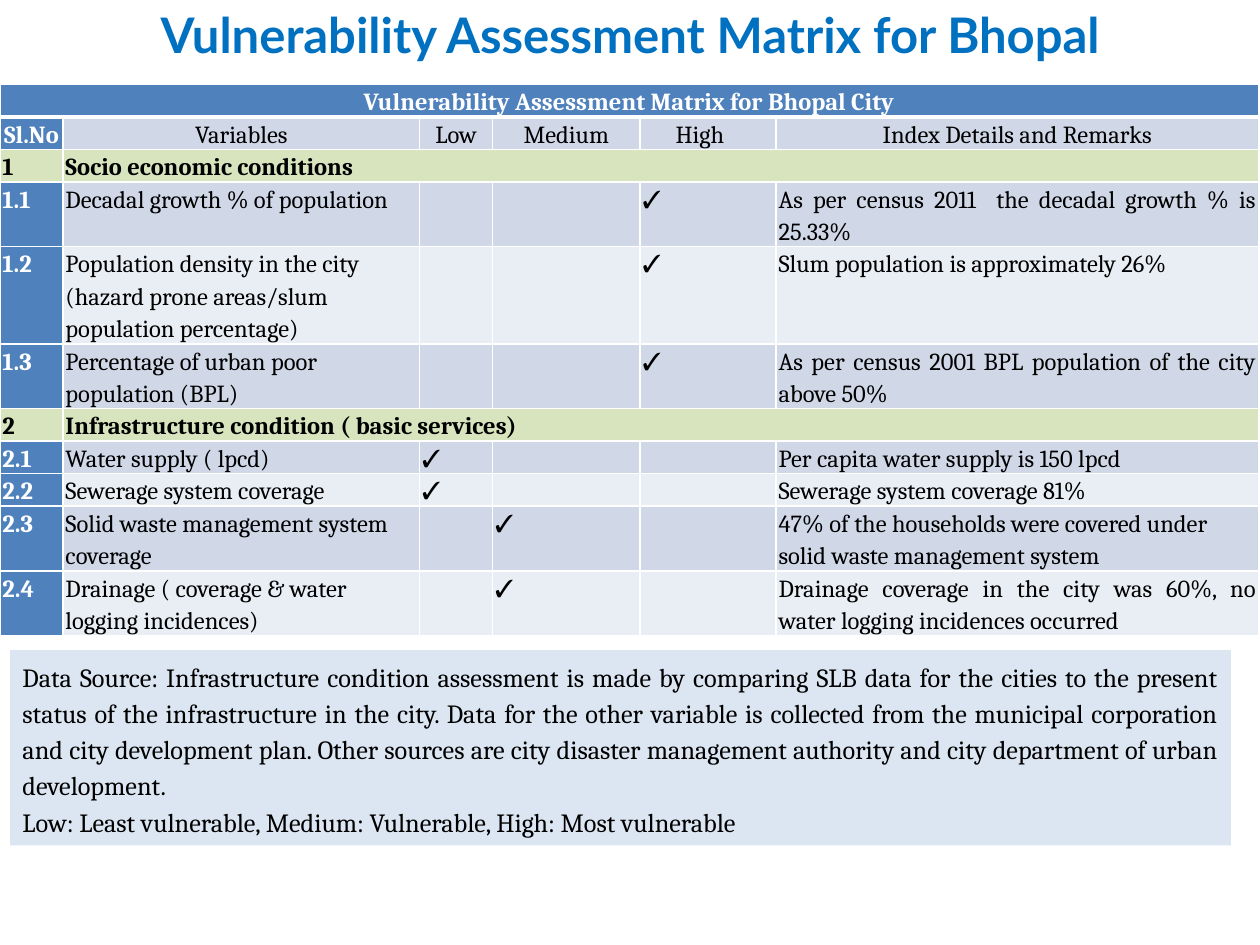
from lxml import etree
from pptx import Presentation
from pptx.dml.color import RGBColor
from pptx.enum.shapes import MSO_SHAPE
from pptx.enum.text import MSO_ANCHOR, MSO_AUTO_SIZE, PP_ALIGN
from pptx.oxml.ns import qn
from pptx.util import Inches, Pt

RECTANGLE = MSO_SHAPE.RECTANGLE
MIDDLE = MSO_ANCHOR.MIDDLE
GROW = MSO_AUTO_SIZE.SHAPE_TO_FIT_TEXT
LEFT, CENTER, JUSTIFY = PP_ALIGN.LEFT, PP_ALIGN.CENTER, PP_ALIGN.JUSTIFY

COLORS = {
    "title": "0070C0", "header": "4F81BD", "section": "D7E4BD",
    "band_dark": "D0D8E8", "band_light": "E9EDF4", "note": "DCE6F2",
    "white": "FFFFFF", "black": "000000",
}
BODY_FONT = "Cambria"
TABLE_SIZE = 14
LINE_SPACING = 1.15
LINE_HEIGHT = 0.25
COLUMN_WIDTHS = [0.5, 2.83, 0.58, 1.17, 1.08, 3.83]
LEVELS = ["Low", "Medium", "High"]
TABLE_TITLE = "Vulnerability Assessment Matrix for Bhopal City"
HEADINGS = ["Sl.No", "Variables", "Low", "Medium", "High   ", "Index Details and Remarks"]

# Section name, then (variable, level, remark, lines of text, remark alignment)
SECTIONS = [
    ("Socio economic conditions", [
        ("Decadal growth % of population", "High",
         "As per census 2011  the decadal growth % is 25.33%", 2, JUSTIFY),
        ("Population density in the city (hazard prone areas/slum population percentage)",
         "High", "Slum population is approximately 26%", 3, JUSTIFY),
        ("Percentage of urban poor population (BPL)", "High",
         "As per census 2001 BPL population of the city above 50%", 2, JUSTIFY),
    ]),
    ("Infrastructure condition ( basic services)", [
        ("Water supply ( lpcd)", "Low", "Per capita water supply is 150 lpcd", 1, JUSTIFY),
        ("Sewerage system coverage", "Low", "Sewerage system coverage 81%", 1, JUSTIFY),
        ("Solid waste management system coverage", "Medium",
         "47% of the households were covered under solid waste management system", 2, LEFT),
        ("Drainage ( coverage & water logging incidences)", "Medium",
         "Drainage coverage in the city was 60%, no water logging incidences occurred",
         2, JUSTIFY),
    ]),
]
NOTES = [
    "Data Source: Infrastructure condition assessment is made by comparing SLB data for "
    "the cities to the present status of the infrastructure in the city. Data for the "
    "other variable is collected from the municipal corporation and city development "
    "plan. Other sources are city disaster management authority and city department of "
    "urban development.",
    "Low: Least vulnerable, Medium: Vulnerable, High: Most vulnerable",
]


def rgb(name):
    return RGBColor.from_string(COLORS[name])


def write(paragraph, text, size, color="black", align=JUSTIFY, bold=False,
          font=BODY_FONT, spacing=LINE_SPACING):
    paragraph.text = text
    paragraph.alignment = align
    paragraph.line_spacing = spacing
    paragraph.font.name = font
    paragraph.font.size = Pt(size)
    paragraph.font.bold = bold
    paragraph.font.color.rgb = rgb(color)


def add_title(slide, text):
    title = slide.shapes.add_textbox(Inches(0.5), Inches(-0.08), Inches(9), Inches(0.7))
    frame = title.text_frame
    frame.word_wrap = True
    frame.vertical_anchor = MIDDLE
    write(frame.paragraphs[0], text, 28, "title", CENTER, True, "Lato", 1.0)


def set_borders(cell, top=1, bottom=1):
    properties = cell._tc.get_or_add_tcPr()
    for side, width in (("L", 1), ("R", 1), ("T", top), ("B", bottom)):
        line = etree.SubElement(properties, qn(f"a:ln{side}"), w=str(Pt(width)))
        fill = etree.SubElement(line, qn("a:solidFill"))
        etree.SubElement(fill, qn("a:srgbClr"), val=COLORS["white"])


def fill_cell(cell, text, fill, **style):
    cell.margin_left = cell.margin_right = Inches(0.02)
    cell.margin_top = cell.margin_bottom = 0
    cell.fill.solid()
    cell.fill.fore_color.rgb = rgb(fill)
    paragraph = cell.text_frame.paragraphs[0]
    if text:
        write(paragraph, text, TABLE_SIZE, **style)
    else:
        # Keeps an empty cell from stretching its row
        etree.SubElement(paragraph._p, qn("a:endParaRPr"), sz=str(TABLE_SIZE * 100))


def fill_item(cells, number, item, band):
    variable, level, remark, _, remark_align = item
    fill_cell(cells[0], number, "header", color="white", bold=True)
    fill_cell(cells[1], variable, band, align=LEFT)
    for cell, name in zip(cells[2:5], LEVELS):
        fill_cell(cell, "✓" if name == level else "", band)
    fill_cell(cells[5], remark, band, align=remark_align)


def add_matrix(slide):
    line_counts = [1, 1]
    for _, items in SECTIONS:
        line_counts += [1] + [item[3] for item in items]
    table = slide.shapes.add_table(
        len(line_counts), len(COLUMN_WIDTHS), 0, Inches(0.67),
        Inches(10), Inches(LINE_HEIGHT * sum(line_counts))).table
    for column, width in zip(table.columns, COLUMN_WIDTHS):
        column.width = Inches(width)
    for index, (row, lines) in enumerate(zip(table.rows, line_counts)):
        row.height = Inches(LINE_HEIGHT * lines)
        for cell in row.cells:
            set_borders(cell, 3 if index == 1 else 1, 3 if index == 0 else 1)
    rows = iter([list(row.cells) for row in table.rows])

    # Table title and column headings
    cells = next(rows)
    cells[0].merge(cells[-1])
    fill_cell(cells[0], TABLE_TITLE, "header", color="white", align=CENTER, bold=True)
    cells = next(rows)
    fill_cell(cells[0], HEADINGS[0], "header", color="white", align=CENTER, bold=True)
    for cell, heading in zip(cells[1:], HEADINGS[1:]):
        fill_cell(cell, heading, "band_dark", align=CENTER)

    # Sections with their numbered items
    for section_number, (name, items) in enumerate(SECTIONS, 1):
        cells = next(rows)
        cells[1].merge(cells[-1])
        fill_cell(cells[0], str(section_number), "section", bold=True)
        fill_cell(cells[1], name, "section", bold=True)
        for item_number, item in enumerate(items, 1):
            band = "band_dark" if item_number % 2 else "band_light"
            fill_item(next(rows), f"{section_number}.{item_number}", item, band)


def add_note(slide, texts):
    note = slide.shapes.add_shape(
        RECTANGLE, Inches(0.08), Inches(5.16), Inches(9.69), Inches(1.55))
    note.shadow.inherit = False
    note.fill.solid()
    note.fill.fore_color.rgb = rgb("note")
    note.line.fill.background()
    frame = note.text_frame
    frame.word_wrap = True
    frame.auto_size = GROW
    frame.vertical_anchor = MSO_ANCHOR.TOP
    for index, text in enumerate(texts):
        paragraph = frame.add_paragraph() if index else frame.paragraphs[0]
        write(paragraph, text, 15)


def main():
    presentation = Presentation()
    presentation.slide_width = Inches(10)
    presentation.slide_height = Inches(7.5)
    slide = presentation.slides.add_slide(presentation.slide_layouts[6])
    add_matrix(slide)
    add_note(slide, NOTES)
    add_title(slide, "Vulnerability Assessment Matrix for Bhopal")
    presentation.save("out.pptx")


if __name__ == "__main__":
    main()
